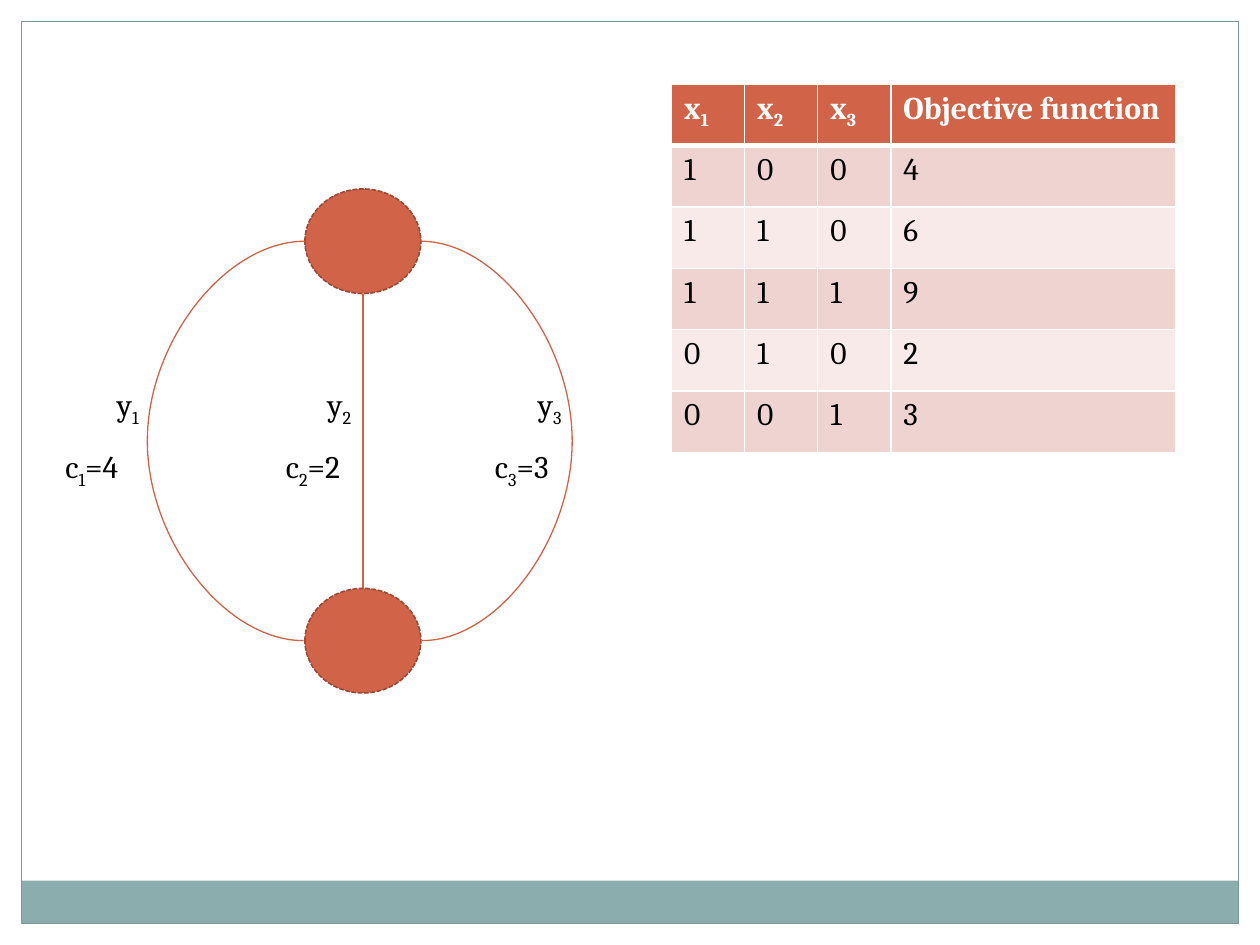
from lxml import etree
from pptx import Presentation
from pptx import util as u
from pptx.dml.color import RGBColor
from pptx.enum import dml, shapes, text
from pptx.oxml.ns import qn

FONT = "Cambria"
RUST, DARK_RUST, WHITE, BLACK = "D16349", "9B4936", "FFFFFF", "000000"
BAND, FRAME = "8CADAE", "7C999A"
ROW_FILLS = ["EED3D0", "F7EAE9"]
HEADER = ["x_1", "x_2", "x_3", "Objective function"]
ROWS = ["1004", "1106", "1119", "0102", "0013"]


def rgb(value):
    return RGBColor.from_string(value)


def write(tf, marked, size=18, color=BLACK, bold=False):
    p = tf.paragraphs[0]

    def add_run(part, subscript=False):
        if not part:
            return
        r = p.add_run()
        r.text = part
        r.font.name, r.font.size, r.font.bold = FONT, u.Pt(size), bold
        r.font.color.rgb = rgb(color)
        if subscript:
            r.font._element.set("baseline", "-25000")

    first, *rest = marked.split("_")
    add_run(first)
    for part in rest:
        add_run(part[0], subscript=True)
        add_run(part[1:])


def add_shape(s, kind, x, y, w, h, fill=None, line=None, width=0.75, dash=None):
    sp = s.shapes.add_shape(kind, *map(u.Inches, (x, y, w, h)))
    sp.shadow.inherit = False
    if fill:
        sp.fill.solid()
        sp.fill.fore_color.rgb = rgb(fill)
    else:
        sp.fill.background()
    if line:
        sp.line.color.rgb = rgb(line)
        sp.line.width = u.Pt(width)
        sp.line.dash_style = dash
    else:
        sp.line.fill.background()
    return sp


def add_edge(s, kind, x1, y1, x2, y2, bulge=None):
    cx = s.shapes.add_connector(kind, *map(u.Inches, (x1, y1, x2, y2)))
    cx.line.color.rgb = rgb(RUST)
    cx.line.width = u.Pt(0.75)
    etree.SubElement(cx._element.spPr, qn("a:effectLst"))
    if bulge:
        guides = cx._element.spPr.find(qn("a:prstGeom")).get_or_add_avLst()
        ratio = round(bulge / abs(x2 - x1) * 100000)
        etree.SubElement(guides, qn("a:gd"), name="adj1", fmla=f"val {ratio}")


def add_label(s, marked, x, y, w):
    tf = s.shapes.add_textbox(*map(u.Inches, (x, y, w, 0.4))).text_frame
    tf.word_wrap = False
    tf.auto_size = text.MSO_AUTO_SIZE.SHAPE_TO_FIT_TEXT
    write(tf, marked)


def add_frame(s, x, y, w, h):
    rect = shapes.MSO_SHAPE.RECTANGLE
    add_shape(s, rect, x, y + h - 0.34, w, 0.34, fill=BAND)
    add_shape(s, rect, x, y, w, h, line=FRAME)


def add_network(s, x, y, w, h):
    node_w, node_h, bulge, gap = 0.92, 0.83, 1.22, 0.01
    left = x + 2
    right = left + node_w
    top, bottom = y + node_h / 2, y + h - node_h / 2
    for node_y in (y, y + h - node_h):
        add_shape(s, shapes.MSO_SHAPE.OVAL, left, node_y, node_w, node_h,
                  RUST, DARK_RUST, 0.9, dml.MSO_LINE.SQUARE_DOT)
    curve, straight = shapes.MSO_CONNECTOR.CURVE, shapes.MSO_CONNECTOR.STRAIGHT
    middle = left + node_w / 2
    add_edge(s, curve, left, top, left - gap, bottom, bulge + 0.05)
    add_edge(s, straight, middle, y + node_h, middle, y + h - node_h)
    add_edge(s, curve, right, top, right + gap, bottom, bulge)
    labels = [(0, 0.41, 4), (1.75, 2.08, 2), (3.41, 3.75, 3)]
    for i, (cost_x, flow_x, cost) in enumerate(labels, 1):
        add_label(s, f"y_{i}", x + flow_x, y + 1.51, 0.42)
        add_label(s, f"c_{i}={cost}", x + cost_x, y + 2, 0.71)


def set_borders(cell, header, below_header):
    tcPr = cell._tc.get_or_add_tcPr()
    widths = {"L": 1, "R": 1, "T": 3 if below_header else 1, "B": 3 if header else 1}
    for side, width in widths.items():
        ln = etree.SubElement(tcPr, qn(f"a:ln{side}"), w=str(u.Pt(width)))
        fill = etree.SubElement(ln, qn("a:solidFill"))
        etree.SubElement(fill, qn("a:srgbClr"), val=WHITE)


def add_objective_table(s, x, y, w, h):
    data = [HEADER, *ROWS]
    table = s.shapes.add_table(len(data), len(HEADER), *map(u.Inches, (x, y, w, h))).table
    narrow = 0.58
    for col, width in zip(table.columns, [narrow] * 3 + [w - 3 * narrow]):
        col.width = u.Inches(width)
    for i, values in enumerate(data):
        header = i == 0
        for j, value in enumerate(values):
            cell = table.cell(i, j)
            set_borders(cell, header, i == 1)
            cell.fill.solid()
            cell.fill.fore_color.rgb = rgb(RUST if header else ROW_FILLS[(i - 1) % 2])
            write(cell.text_frame, value, color=WHITE if header else BLACK, bold=header)


def main():
    prs = Presentation()
    prs.slide_width, prs.slide_height = u.Inches(10), u.Inches(7.5)
    s = prs.slides.add_slide(prs.slide_layouts[6])
    add_frame(s, 0.17, 0.17, 9.66, 7.16)
    add_network(s, 0.42, 1.5, 4.13, 4)
    add_objective_table(s, 5.33, 0.67, 4, 2.92)
    prs.save("out.pptx")


if __name__ == "__main__":
    main()
